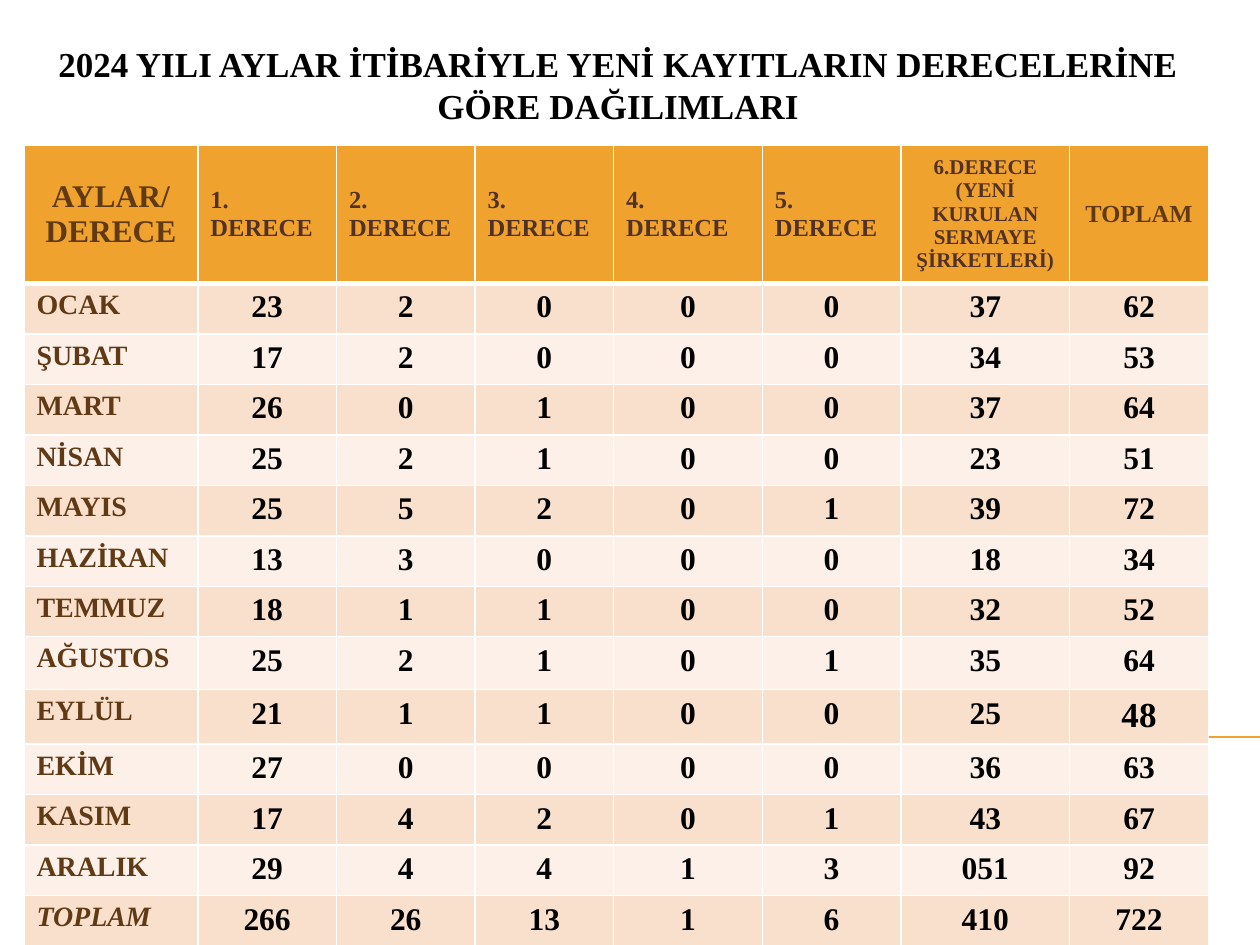
from lxml.etree import SubElement
from pptx import Presentation
from pptx.dml.color import RGBColor
from pptx.enum.shapes import MSO_CONNECTOR
from pptx.enum.text import MSO_ANCHOR as ANCHOR, PP_ALIGN as ALIGN
from pptx.oxml.ns import qn
from pptx.util import Pt

PX = 9144  # 100 px to the inch

WHITE = RGBColor(0xFF, 0xFF, 0xFF)
BLACK = RGBColor(0, 0, 0)
ORANGE = RGBColor(0xF0, 0xA2, 0x2E)
BROWN = RGBColor(0x60, 0x3A, 0x14)
DARK_BROWN = RGBColor(0x52, 0x32, 0x27)
BANDS = (RGBColor(0xF9, 0xE0, 0xCD), RGBColor(0xFC, 0xF0, 0xE8))

TITLE = "2024 YILI AYLAR İTİBARİYLE YENİ KAYITLARIN DERECELERİNE GÖRE DAĞILIMLARI"
HEADERS = (
    ["AYLAR/ DERECE"]
    + [f"{n}. DERECE" for n in range(1, 6)]
    + ["6.DERECE (YENİ KURULAN SERMAYE ŞİRKETLERİ)", "TOPLAM"]
)
ROWS = [
    ("OCAK", 23, 2, 0, 0, 0, 37, 62),
    ("ŞUBAT", 17, 2, 0, 0, 0, 34, 53),
    ("MART", 26, 0, 1, 0, 0, 37, 64),
    ("NİSAN", 25, 2, 1, 0, 0, 23, 51),
    ("MAYIS", 25, 5, 2, 0, 1, 39, 72),
    ("HAZİRAN", 13, 3, 0, 0, 0, 18, 34),
    ("TEMMUZ", 18, 1, 1, 0, 0, 32, 52),
    ("AĞUSTOS", 25, 2, 1, 0, 1, 35, 64),
    ("EYLÜL", 21, 1, 1, 0, 0, 25, 48),
    ("EKİM", 27, 0, 0, 0, 0, 36, 63),
    ("KASIM", 17, 4, 2, 0, 1, 43, 67),
    ("ARALIK", 29, 4, 4, 1, 3, "051", 92),
    ("TOPLAM", 266, 26, 13, 1, 6, 410, 722),
]
COL_WIDTHS = [138, 110, 110, 110, 118, 110, 134, 110]
ROW_HEIGHTS = [108] + [39] * 7 + [42] * 2 + [39] * 4


def write(tf, text, size=18, color=BLACK, align=ALIGN.CENTER, italic=False):
    p = tf.paragraphs[0]
    p.alignment = align
    r = p.add_run()
    r.text = str(text)
    font = r.font
    font.name = "Times New Roman"
    font.size = Pt(size)
    font.bold = True
    font.italic = italic
    font.color.rgb = color


def header_format(col):
    if col == 0:
        return dict(size=18, color=BROWN)
    if col == 6:
        return dict(size=12, color=DARK_BROWN)
    if col == 7:
        return dict(size=14, color=BROWN)
    return dict(size=14, color=DARK_BROWN, align=ALIGN.LEFT)


def body_format(col, month, value):
    if col == 0:
        return dict(size=16, color=BROWN, align=ALIGN.LEFT, italic=month == "TOPLAM")
    return dict(size=20 if (month, value) == ("EYLÜL", 48) else 18)


class Deck:
    def __init__(self, width, height):
        self.prs = Presentation()
        self.prs.slide_width = width * PX
        self.prs.slide_height = height * PX
        self.s = self.prs.slides.add_slide(self.prs.slide_layouts[6])

    def line(self, x1, y1, x2, y2, color, width):
        c = self.s.shapes.add_connector(
            MSO_CONNECTOR.STRAIGHT, x1 * PX, y1 * PX, x2 * PX, y2 * PX
        )
        c.line.color.rgb = color
        c.line.width = Pt(width)
        SubElement(c._element.spPr, qn("a:effectLst"))

    def text(self, x, y, w, h, text, **fmt):
        sp = self.s.shapes.add_textbox(x * PX, y * PX, w * PX, h * PX)
        tf = sp.text_frame
        tf.word_wrap = True
        tf.vertical_anchor = ANCHOR.TOP
        write(tf, text, **fmt)

    def table(self, x, y, col_widths, row_heights):
        """Add an empty table and return it."""
        table = self.s.shapes.add_table(
            len(row_heights), len(col_widths), x * PX, y * PX,
            sum(col_widths) * PX, sum(row_heights) * PX,
        ).table
        for column, w in zip(table.columns, col_widths):
            column.width = w * PX
        for row, h in zip(table.rows, row_heights):
            row.height = h * PX
        return table

    def cell(self, cell, text, fill, anchor=ANCHOR.TOP, top=1, bottom=1, **fmt):
        """Fill one cell; top and bottom are border widths in points."""
        tc_pr = cell._tc.get_or_add_tcPr()
        for side, width in (("L", 1), ("R", 1), ("T", top), ("B", bottom)):
            ln = SubElement(tc_pr, qn(f"a:ln{side}"), w=str(Pt(width)))
            solid = SubElement(ln, qn("a:solidFill"))
            SubElement(solid, qn("a:srgbClr"), val=str(WHITE))
        cell.fill.solid()
        cell.fill.fore_color.rgb = fill
        cell.vertical_anchor = anchor
        write(cell.text_frame, text, **fmt)


def main():
    deck = Deck(1000, 750)
    deck.line(56, 585, 1000, 585, ORANGE, 0.75)
    deck.text(28, 29, 925, 63, TITLE, size=20)

    table = deck.table(19, 115, COL_WIDTHS, ROW_HEIGHTS)
    for col, text in enumerate(HEADERS):
        deck.cell(table.cell(0, col), text, ORANGE, anchor=ANCHOR.MIDDLE,
                  bottom=3, **header_format(col))
    for i, values in enumerate(ROWS):
        for col, value in enumerate(values):
            deck.cell(table.cell(i + 1, col), value, BANDS[i % 2],
                      top=1 if i else 3, **body_format(col, values[0], value))

    deck.prs.save("out.pptx")


if __name__ == "__main__":
    main()
